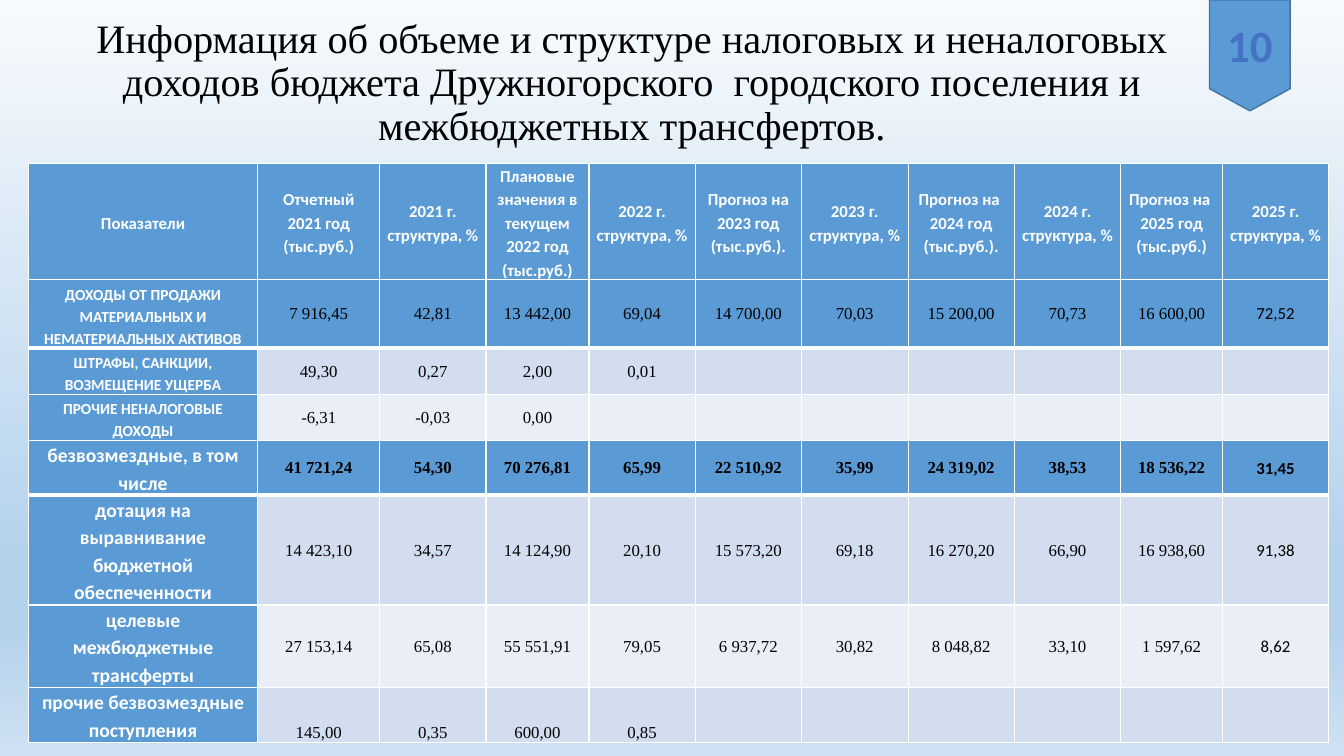
from dataclasses import dataclass

from lxml import etree
from pptx import Presentation
from pptx.dml.color import RGBColor
from pptx.enum.shapes import MSO_SHAPE
from pptx.enum.text import MSO_ANCHOR, MSO_AUTO_SIZE, PP_ALIGN
from pptx.oxml.ns import qn
from pptx.util import Pt

BADGE_SHAPE = MSO_SHAPE.FLOWCHART_OFFPAGE_CONNECTOR
MIDDLE, BOTTOM = MSO_ANCHOR.MIDDLE, MSO_ANCHOR.BOTTOM
CENTER = PP_ALIGN.CENTER
NO_AUTOFIT = MSO_AUTO_SIZE.NONE

COLORS = {
    "accent": "5B9BD5", "badge_line": "43739E", "badge_text": "4472C4",
    "band_dark": "D2DEEF", "band_light": "EAEFF7",
    "white": "FFFFFF", "black": "000000",
}
BACKGROUND_STOPS = [(0, "F7FAFD"), (74, "B5D2EC"), (83, "B5D2EC"), (100, "CEE1F2")]
SANS, SERIF = "Calibri", "Times New Roman"
TABLE_LEFT = 20.2
COLUMN_WIDTHS = [164, 87, 76, 73.5, 76, 75.8, 76.2, 75.8, 76.2, 72.5, 76]


@dataclass
class Row:
    height: float
    label: str
    values: list[str]
    fill: str
    label_anchor: MSO_ANCHOR = MIDDLE
    value_anchor: MSO_ANCHOR = MIDDLE
    bold: bool = False
    bottom_border: float = 1


@dataclass
class BudgetTable:
    top: float
    label_size: float
    label_margin: float
    rows: list[Row]
    is_header: bool = False


TABLES = [
    BudgetTable(116.6, 12, 4.5, [
        Row(82.6, "Показатели", [
            "Отчетный 2021 год (тыс.руб.)", "2021 г. структура, %",
            "Плановые значения в текущем 2022 год (тыс.руб.)", "2022 г. структура, %",
            "Прогноз на 2023 год (тыс.руб.).", "2023 г. структура, %",
            "Прогноз на  2024 год (тыс.руб.).", "2024 г. структура, %",
            "Прогноз на  2025 год (тыс.руб.)", "2025 г. структура, %",
        ], "accent", bottom_border=3),
    ], is_header=True),
    BudgetTable(199.4, 11, 4.5, [
        Row(49.4, "ДОХОДЫ ОТ ПРОДАЖИ МАТЕРИАЛЬНЫХ И НЕМАТЕРИАЛЬНЫХ АКТИВОВ", [
            "7 916,45", "42,81", "13 442,00", "69,04", "14 700,00", "70,03",
            "15 200,00", "70,73", "16 600,00", "72,52",
        ], "accent", BOTTOM, bottom_border=3),
        Row(32.9, "ШТРАФЫ, САНКЦИИ, ВОЗМЕЩЕНИЕ УЩЕРБА",
            ["49,30", "0,27", "2,00", "0,01"], "band_dark", BOTTOM),
        Row(32.9, "ПРОЧИЕ НЕНАЛОГОВЫЕ ДОХОДЫ",
            ["-6,31", "-0,03", "0,00"], "band_light", BOTTOM),
    ]),
    BudgetTable(314.6, 14, 5.4, [
        Row(37.6, "безвозмездные, в том числе", [
            "41 721,24", "54,30", "70 276,81", "65,99", "22 510,92", "35,99",
            "24 319,02", "38,53", "18 536,22", "31,45",
        ], "accent", bold=True, bottom_border=3),
        Row(75.6, "дотация на выравнивание бюджетной обеспеченности", [
            "14 423,10", "34,57", "14 124,90", "20,10", "15 573,20", "69,18",
            "16 270,20", "66,90", "16 938,60", "91,38",
        ], "band_dark"),
        Row(57, "целевые межбюджетные трансферты", [
            "27 153,14", "65,08", "55 551,91", "79,05", "6 937,72", "30,82",
            "8 048,82", "33,10", "1 597,62", "8,62",
        ], "band_light"),
        Row(37.6, "прочие безвозмездные поступления",
            ["145,00", "0,35", "600,00", "0,85"], "band_dark", BOTTOM, BOTTOM),
    ]),
]


def color(name: str) -> RGBColor:
    return RGBColor.from_string(COLORS[name])


def format_text(text_frame, size: float, font: str, color_name: str,
                bold: bool = False, line_spacing: float = 1.0) -> None:
    for paragraph in text_frame.paragraphs:
        paragraph.alignment = CENTER
        paragraph.line_spacing = line_spacing
        for run in paragraph.runs:
            run.font.size = Pt(size)
            run.font.name = font
            run.font.bold = bold
            run.font.color.rgb = color(color_name)


def set_background(slide) -> None:
    fill = slide.background.fill
    fill.gradient()
    fill.gradient_angle = 270
    stop_list = next(slide.element.iter(qn("a:gsLst")))
    for stop in list(stop_list):
        stop_list.remove(stop)
    for position, hex_color in BACKGROUND_STOPS:
        stop = etree.SubElement(stop_list, qn("a:gs"), pos=str(position * 1000))
        etree.SubElement(stop, qn("a:srgbClr"), val=hex_color)


def set_borders(cell, bottom_width: float) -> None:
    properties = cell._tc.get_or_add_tcPr()
    for side, width in (("L", 1), ("R", 1), ("T", 1), ("B", bottom_width)):
        line = etree.SubElement(properties, qn(f"a:ln{side}"), w=str(Pt(width)))
        line_fill = etree.SubElement(line, qn("a:solidFill"))
        etree.SubElement(line_fill, qn("a:srgbClr"), val=COLORS["white"])


def fill_cell(cell, budget_table: BudgetTable, row: Row, column: int) -> None:
    is_label = column == 0 or budget_table.is_header
    side_margin = budget_table.label_margin if is_label else 0.7
    cell.margin_left = cell.margin_right = Pt(side_margin)
    cell.margin_top = Pt(0 if is_label else 0.7)
    cell.margin_bottom = Pt(0)
    cell.vertical_anchor = row.label_anchor if is_label else row.value_anchor
    set_borders(cell, row.bottom_border)
    cell.fill.solid()
    cell.fill.fore_color.rgb = color("accent" if is_label else row.fill)

    texts = [row.label, *row.values]
    if column >= len(texts):
        return
    cell.text_frame.text = texts[column]
    if is_label:
        format_text(cell.text_frame, budget_table.label_size, SANS, "white", True, 1.15)
    else:
        font = SANS if column == len(COLUMN_WIDTHS) - 1 else SERIF
        format_text(cell.text_frame, 12, font, "black", row.bold)


def draw_table(slide, budget_table: BudgetTable) -> None:
    rows = budget_table.rows
    frame = slide.shapes.add_table(
        len(rows), len(COLUMN_WIDTHS), Pt(TABLE_LEFT), Pt(budget_table.top),
        Pt(sum(COLUMN_WIDTHS)), Pt(sum(row.height for row in rows)))
    table = frame.table
    table.first_row = table.horz_banding = False
    for column, width in enumerate(COLUMN_WIDTHS):
        table.columns[column].width = Pt(width)
    for index, row in enumerate(rows):
        table.rows[index].height = Pt(row.height)
        for column in range(len(COLUMN_WIDTHS)):
            fill_cell(table.cell(index, column), budget_table, row, column)


def draw_title(slide) -> None:
    title = slide.shapes.title
    title.left, title.top, title.width, title.height = Pt(9.4), Pt(6.5), Pt(884), Pt(103.7)
    text_frame = title.text_frame
    text_frame.text = ("Информация об объеме и структуре налоговых и неналоговых доходов "
                       "бюджета Дружногорского  городского поселения и "
                       "межбюджетных трансфертов.")
    text_frame.word_wrap = True
    text_frame.auto_size = NO_AUTOFIT
    text_frame.vertical_anchor = BOTTOM
    format_text(text_frame, 28.8, SERIF, "black", line_spacing=0.9)


def draw_badge(slide) -> None:
    badge = slide.shapes.add_shape(BADGE_SHAPE, Pt(864), Pt(0), Pt(57.6), Pt(79.2))
    badge.shadow.inherit = False
    badge.fill.solid()
    badge.fill.fore_color.rgb = color("accent")
    badge.line.color.rgb = color("badge_line")
    badge.line.width = Pt(1)
    badge.text_frame.text = "10"
    badge.text_frame.vertical_anchor = MIDDLE
    format_text(badge.text_frame, 32, SANS, "badge_text", True)


def main() -> None:
    presentation = Presentation()
    presentation.slide_width, presentation.slide_height = Pt(960), Pt(540)
    slide = presentation.slides.add_slide(presentation.slide_layouts[5])
    set_background(slide)
    # Heading and page badge
    draw_title(slide)
    draw_badge(slide)
    # Stacked budget tables
    for budget_table in TABLES:
        draw_table(slide, budget_table)
    presentation.save("out.pptx")


if __name__ == "__main__":
    main()
